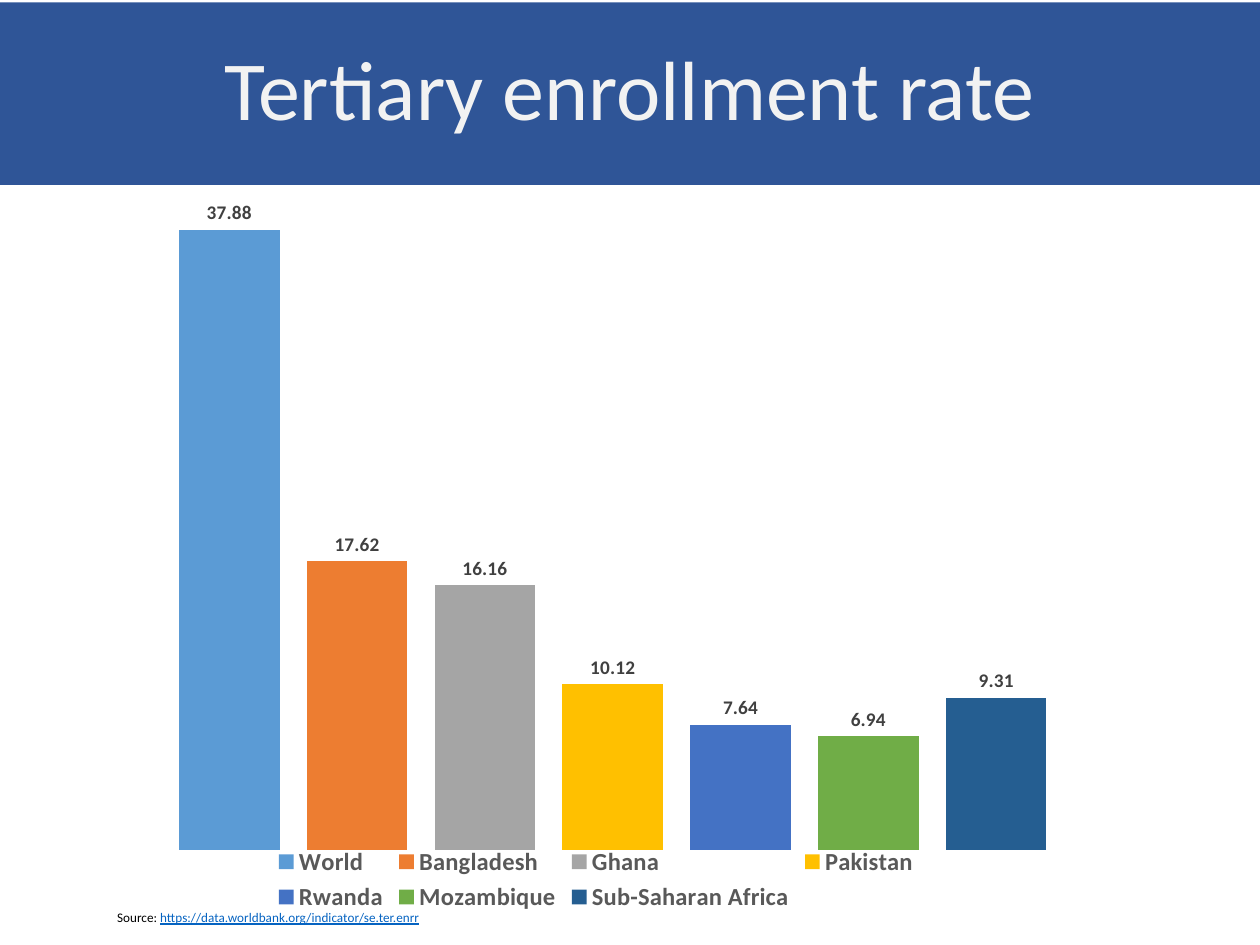
from lxml.etree import SubElement, QName
from pptx import Presentation
from pptx.chart.data import CategoryChartData
from pptx.dml.color import RGBColor
from pptx.enum.chart import XL_CHART_TYPE as ChartType, XL_LABEL_POSITION as LabelPos, XL_LEGEND_POSITION as LegendPos
from pptx.enum.shapes import MSO_SHAPE as Shape
from pptx.enum.text import MSO_ANCHOR as Anchor, MSO_AUTO_SIZE as AutoSize, PP_ALIGN as Align
from pptx.oxml.ns import qn
from pptx.util import Cm, Pt

FONT = "Calibri"
COLORS = {
    "banner": "2F5597", "title": "F2F2F2", "text": "000000", "link": "0563C1",
    "legend": "595959", "label": "404040",
}
ENROLLMENT = [
    ("World", 37.88, "5B9BD5"),
    ("Bangladesh", 17.62, "ED7D31"),
    ("Ghana", 16.16, "A5A5A5"),
    ("Pakistan", 10.12, "FFC000"),
    ("Rwanda", 7.64, "4472C4"),
    ("Mozambique", 6.94, "70AD47"),
    ("Sub-Saharan Africa", 9.31, "255E91"),
]


def rgb(value):
    return RGBColor.from_string(value)


def style_font(font, size, color, bold=False, underline=None):
    font.name = FONT
    font.size = Pt(size)
    font.bold = bold
    font.underline = underline
    font.color.rgb = rgb(color)


def add_run(p, text, **style):
    r = p.add_run()
    r.text = text
    style_font(r.font, **style)


def add_banner(s, left, top, width, height):
    sp = s.shapes.add_shape(Shape.RECTANGLE, left, top, width, height)
    sp.shadow.inherit = False
    sp.fill.solid()
    sp.fill.fore_color.rgb = rgb(COLORS["banner"])
    sp.line.fill.background()
    tf = sp.text_frame
    tf.word_wrap = True
    tf.vertical_anchor = Anchor.MIDDLE
    p = tf.paragraphs[0]
    p.alignment = Align.CENTER
    p.line_spacing = 0.9
    add_run(p, "Tertiary enrollment rate", size=48, color=COLORS["title"])


def set_plot_layout(chart, x, y, w, h):
    plot_area = chart.plots[0]._element.getparent()
    for old in plot_area.findall(qn("c:layout")):
        plot_area.remove(old)
    layout = SubElement(plot_area, QName(qn("c:layout")))
    plot_area.insert(0, layout)
    manual = SubElement(layout, qn("c:manualLayout"))
    settings = [("layoutTarget", "inner"), ("xMode", "edge"), ("yMode", "edge"),
                ("x", x), ("y", y), ("w", w), ("h", h)]
    for tag, value in settings:
        SubElement(manual, qn(f"c:{tag}")).set("val", str(value))


def add_enrollment_chart(s, left, top, width, height):
    data = CategoryChartData(number_format="0.00")
    data.categories = ["1"]
    for name, rate, _ in ENROLLMENT:
        data.add_series(name, [rate])
    chart = s.shapes.add_chart(
        ChartType.COLUMN_CLUSTERED, left, top, width, height, data).chart
    style_font(chart.font, 10, COLORS["text"])
    chart.has_title = False
    chart.has_legend = True
    chart.legend.position = LegendPos.BOTTOM
    chart.legend.include_in_layout = False
    style_font(chart.legend.font, 14, COLORS["legend"], bold=True)

    value_axis = chart.value_axis
    value_axis.minimum_scale = 0
    value_axis.maximum_scale = 40
    value_axis.has_major_gridlines = False
    value_axis.visible = False
    chart.category_axis.visible = False

    plot = chart.plots[0]
    plot.vary_by_categories = False
    plot.gap_width = 219
    plot.overlap = -27
    for series, (_, _, color) in zip(plot.series, ENROLLMENT):
        series.format.fill.solid()
        series.format.fill.fore_color.rgb = rgb(color)
        labels = series.data_labels
        labels.show_value = True
        labels.number_format = "0.00"
        labels.number_format_is_linked = False
        labels.position = LabelPos.OUTSIDE_END
        style_font(labels.font, 11, COLORS["label"], bold=True)
    set_plot_layout(chart, 0.03, 0.03, 0.97, 0.88)


def add_source(s, left, top, width, height):
    tf = s.shapes.add_textbox(left, top, width, height).text_frame
    tf.word_wrap = False
    tf.auto_size = AutoSize.SHAPE_TO_FIT_TEXT
    p = tf.paragraphs[0]
    add_run(p, "Source: ", size=7.5, color=COLORS["text"])
    add_run(p, "https://data.worldbank.org/indicator/se.ter.enrr",
            size=7.5, color=COLORS["link"], underline=True)


def main():
    prs = Presentation()
    prs.slide_width = Cm(25.4)
    prs.slide_height = Cm(19.05)
    s = prs.slides.add_slide(prs.slide_layouts[6])
    add_banner(s, 0, Cm(0.05), prs.slide_width, Cm(3.68))
    add_enrollment_chart(s, Cm(0.71), Cm(3.48), Cm(22.61), Cm(15.01))
    add_source(s, Cm(2.11), Cm(18.21), Cm(6.71), Cm(0.58))
    prs.save("out.pptx")


if __name__ == "__main__":
    main()
